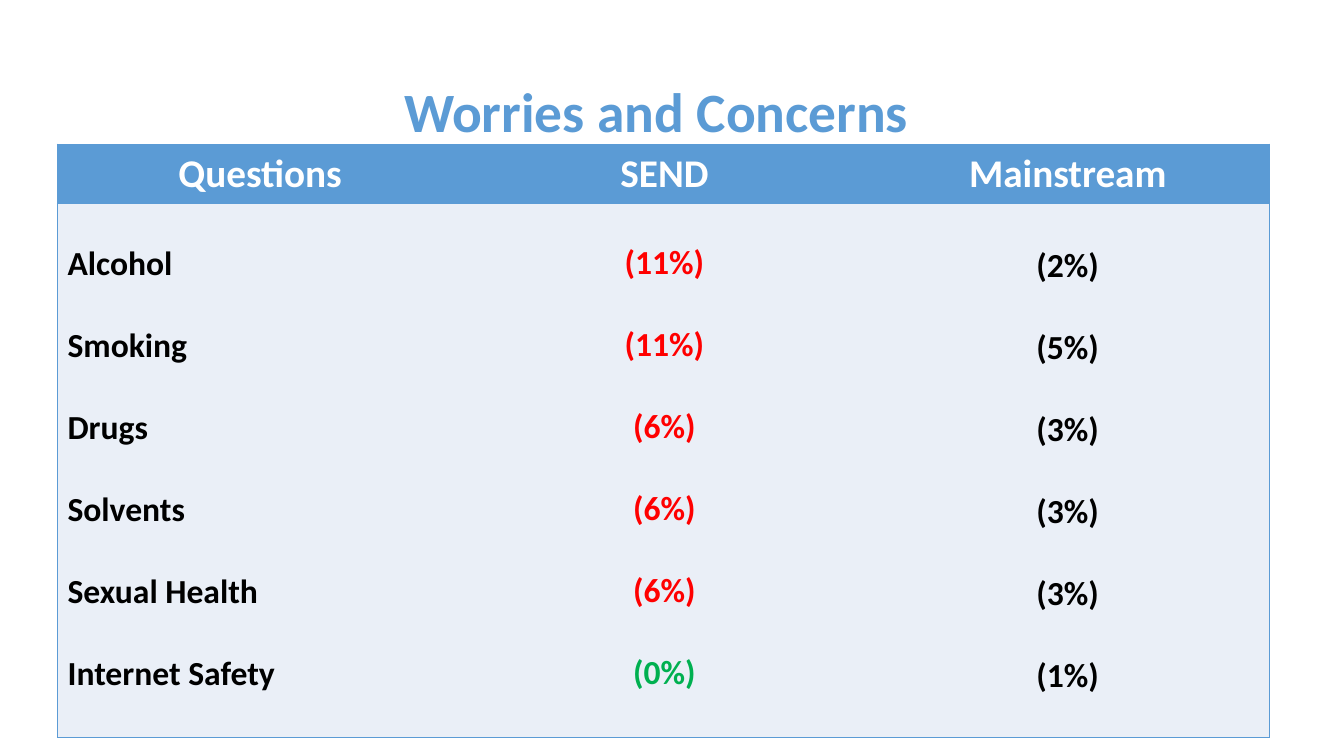
import pptx
import pptx.dml.color
import pptx.enum.text
import pptx.oxml
import pptx.oxml.ns
import pptx.util
from dataclasses import dataclass

Inches = pptx.util.Inches
Pt = pptx.util.Pt
PP_ALIGN = pptx.enum.text.PP_ALIGN
MIDDLE = pptx.enum.text.MSO_ANCHOR.MIDDLE


@dataclass(frozen=True)
class Theme:
    font: str = "Calibri"
    accent: str = "5B9BD5"
    band: str = "EAEFF7"
    white: str = "FFFFFF"
    black: str = "000000"
    high: str = "FF0000"
    low: str = "00B050"
    title_size: float = 39.6
    header_size: float = 28
    body_size: float = 24
    answer_gap: float = 29.3


theme = Theme()


def add_bold_run(paragraph, text, size, color, align):
    paragraph.alignment = align
    run = paragraph.add_run()
    run.text = text
    run.font.name = theme.font
    run.font.size = Pt(size)
    run.font.bold = True
    run.font.color.rgb = pptx.dml.color.RGBColor.from_string(color)


def style_cell(cell, fill, bordered_sides):
    """Fill the cell and draw thin lines on the given sides, none on the others."""
    cell.vertical_anchor = MIDDLE
    cell.fill.solid()
    cell.fill.fore_color.rgb = pptx.dml.color.RGBColor.from_string(fill)
    properties = cell._tc.get_or_add_tcPr()
    for position, side in enumerate("LRTB"):
        paint = "<a:noFill/>"
        if side in bordered_sides:
            paint = f'<a:solidFill><a:srgbClr val="{theme.accent}"/></a:solidFill>'
        properties.insert(position, pptx.oxml.parse_xml(
            f'<a:ln{side} {pptx.oxml.ns.nsdecls("a")} w="{Pt(1)}">{paint}</a:ln{side}>'))


presentation = pptx.Presentation()
presentation.slide_width = Inches(13.33)
presentation.slide_height = Inches(7.5)
slide = presentation.slides.add_slide(presentation.slide_layouts[6])

heading = slide.shapes.add_textbox(
    Inches(0.17), Inches(0.68), Inches(12.68), Inches(0.83)).text_frame
heading.word_wrap = True
heading.vertical_anchor = MIDDLE
add_bold_run(heading.paragraphs[0], "Worries and Concerns",
             theme.title_size, theme.accent, PP_ALIGN.CENTER)

# Each column: header, width, alignment, bottom margin, answers with colours
worries = ["Alcohol", "Smoking", "Drugs", "Solvents", "Sexual Health", "Internet Safety"]
send = ["(11%)", "(11%)", "(6%)", "(6%)", "(6%)", "(0%)"]
mainstream = ["(2%)", "(5%)", "(3%)", "(3%)", "(3%)", "(1%)"]
columns = [
    ("Questions", 4.02, PP_ALIGN.LEFT, 0.09, [(worry, theme.black) for worry in worries]),
    ("SEND", 4, PP_ALIGN.CENTER, 0.11,
     [(share, theme.low if share == "(0%)" else theme.high) for share in send]),
    ("Mainstream", 4, PP_ALIGN.CENTER, 0.05, [(share, theme.black) for share in mainstream]),
]

concerns = slide.shapes.add_table(
    2, len(columns), Inches(0.57), Inches(1.43), Inches(12.02), Inches(5.89)).table
concerns.horz_banding = False
concerns.rows[0].height = Inches(0.59)
concerns.rows[1].height = Inches(5.3)

for index, (header, width, align, bottom_margin, answers) in enumerate(columns):
    concerns.columns[index].width = Inches(width)
    sides = "TB" + {0: "L", len(columns) - 1: "R"}.get(index, "")

    header_cell = concerns.cell(0, index)
    style_cell(header_cell, theme.accent, sides)
    add_bold_run(header_cell.text_frame.paragraphs[0], header,
                 theme.header_size, theme.white, PP_ALIGN.CENTER)

    answer_cell = concerns.cell(1, index)
    style_cell(answer_cell, theme.band, sides)
    answer_cell.margin_bottom = Inches(bottom_margin)
    answer_frame = answer_cell.text_frame
    for row, (answer, color) in enumerate(answers):
        if row == 0:
            paragraph = answer_frame.paragraphs[0]
        else:
            paragraph = answer_frame.add_paragraph()
            paragraph.space_before = Pt(theme.answer_gap)
        add_bold_run(paragraph, answer, theme.body_size, color, align)

presentation.save("out.pptx")
